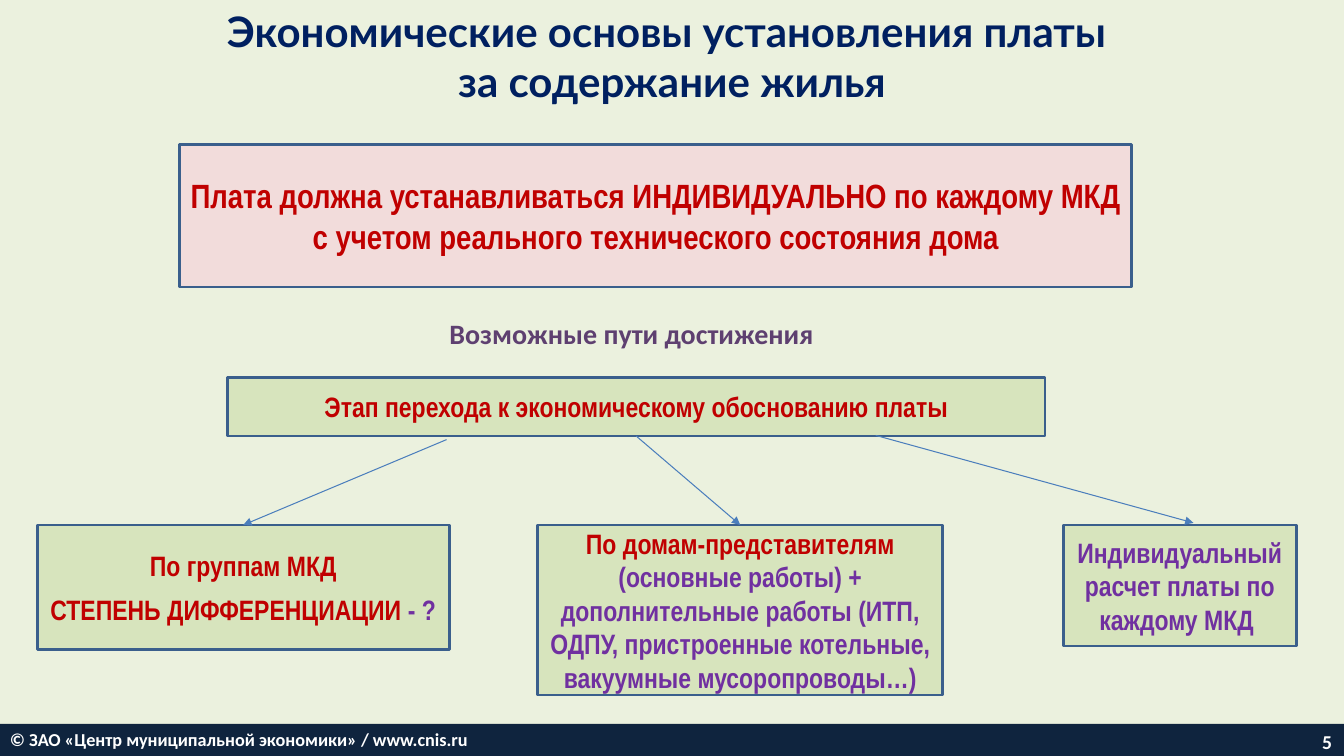
from copy import deepcopy
from dataclasses import dataclass

from pptx import Presentation
from pptx.dml.color import RGBColor
from pptx.enum.shapes import MSO_CONNECTOR, MSO_SHAPE
from pptx.enum.text import MSO_ANCHOR, MSO_AUTO_SIZE, PP_ALIGN
from pptx.oxml.ns import qn
from pptx.util import Pt
from lxml.etree import SubElement


@dataclass(frozen=True)
class Theme:
    background: str = "EBF1DE"
    navy: str = "002060"
    red: str = "C00000"
    purple: str = "7030A0"
    plum: str = "5E4070"
    white: str = "FFFFFF"
    pink: str = "F2DCDB"
    green: str = "D7E4BD"
    footer: str = "0F243E"
    border: str = "3A5F8C"
    arrow: str = "4B7EBC"
    title_font: str = "Lato"
    box_font: str = "Arial Narrow"
    plain_font: str = "Calibri"
    title_size: int = 30
    thesis_size: int = 24
    body_size: int = 20
    number_size: int = 14
    footer_size: int = 13


def color(value):
    return RGBColor.from_string(value)


def write(frame, paragraphs, font, size, align=PP_ALIGN.LEFT,
          anchor=MSO_ANCHOR.TOP, after=0):
    frame.word_wrap = True
    frame.auto_size = MSO_AUTO_SIZE.NONE
    frame.vertical_anchor = anchor
    for index, spans in enumerate(paragraphs):
        para = frame.add_paragraph() if index else frame.paragraphs[0]
        para.alignment = align
        para.space_after = Pt(after)
        for text, ink in spans:
            for line, words in enumerate(text.split("\n")):
                if line:
                    para.add_line_break()
                    para._p[-1].append(deepcopy(span._r.rPr))
                span = para.add_run()
                span.text = words
                span.font.name = font
                span.font.size = Pt(size)
                span.font.bold = True
                span.font.color.rgb = color(ink)


class SlideBuilder:
    def __init__(self, page, theme):
        self.page = page
        self.theme = theme
        page.background.fill.solid()
        page.background.fill.fore_color.rgb = color(theme.background)

    def title(self, text, left, top, width, height):
        box = self.page.shapes.title
        box.left, box.top, box.width, box.height = map(Pt, (left, top, width, height))
        write(box.text_frame, [[(text, self.theme.navy)]], self.theme.title_font,
              self.theme.title_size, align=PP_ALIGN.CENTER)

    def label(self, text, ink, size, place, **layout):
        box = self.page.shapes.add_textbox(*map(Pt, place))
        write(box.text_frame, [[(text, ink)]], self.theme.plain_font, size, **layout)

    def rectangle(self, place, fill):
        box = self.page.shapes.add_shape(MSO_SHAPE.RECTANGLE, *map(Pt, place))
        box.shadow.inherit = False
        box.fill.solid()
        box.fill.fore_color.rgb = color(fill)
        box.line.fill.background()
        return box

    def card(self, paragraphs, place, fill=None, size=None):
        box = self.rectangle(place, fill or self.theme.green)
        box.line.color.rgb = color(self.theme.border)
        box.line.width = Pt(2)
        write(box.text_frame, paragraphs, self.theme.box_font,
              size or self.theme.body_size, align=PP_ALIGN.CENTER,
              anchor=MSO_ANCHOR.MIDDLE, after=7)
        return box

    def footer(self, text, place):
        box = self.rectangle(place, self.theme.footer)
        write(box.text_frame, [[(text, self.theme.white)]], self.theme.plain_font,
              self.theme.footer_size)

    def arrow(self, start, end, source=None, target=None):
        link = self.page.shapes.add_connector(
            MSO_CONNECTOR.STRAIGHT, *map(Pt, (*start, *end)))
        if source:
            link.begin_connect(source, 2)
        if target:
            link.end_connect(target, 0)
        link.line.color.rgb = color(self.theme.arrow)
        link.line.width = Pt(0.75)
        SubElement(link.line._get_or_add_ln(), qn("a:tailEnd"), type="triangle")
        SubElement(link._element.spPr, qn("a:effectLst"))


def main():
    deck = Presentation()
    deck.slide_width, deck.slide_height = Pt(960), Pt(540)
    theme = Theme()
    slide = SlideBuilder(deck.slides.add_slide(deck.slide_layouts[5]), theme)
    row_top = 375

    slide.title("Экономические основы установления платы \nза содержание жилья",
                120, 0, 720, 80)
    slide.card([[("Плата должна устанавливаться ИНДИВИДУАЛЬНО по каждому МКД "
                  "с учетом реального технического состояния дома", theme.red)]],
               (128, 103, 680.5, 102), theme.pink, theme.thesis_size)
    slide.label("Возможные пути достижения", theme.plum, theme.body_size,
                (314, 222.5, 357, 32))
    stage = slide.card([[("Этап перехода к экономическому обоснованию платы", theme.red)]],
                       (162.5, 269.5, 584, 42))

    groups = slide.card([[("По группам МКД", theme.red)],
                         [("СТЕПЕНЬ ДИФФЕРЕНЦИАЦИИ ", theme.red), ("- ?", theme.purple)]],
                        (26.5, row_top, 294.5, 89))
    samples = slide.card([[("По домам-представителям ", theme.red),
                           ("(основные работы) + дополнительные работы (ИТП, ОДПУ, "
                            "пристроенные котельные, вакуумные мусоропроводы…)",
                            theme.purple)]],
                         (384, row_top, 289.5, 121.5))
    slide.card([[("Индивидуальный расчет платы по каждому МКД ", theme.purple)]],
               (759.5, row_top, 166.5, 86.5))

    slide.arrow((319, 314), (173.5, row_top), target=groups)
    slide.arrow((454.5, 311.5), (528.5, row_top), source=stage, target=samples)
    slide.arrow((625.5, 311), (852.5, 373.5))

    slide.footer("© ЗАО «Центр муниципальной экономики» / www.cnis.ru",
                 (0, 517, 960, 23))
    slide.label("5", theme.white, theme.number_size, (790.5, 519, 168, 21.5),
                align=PP_ALIGN.RIGHT, anchor=MSO_ANCHOR.MIDDLE)
    deck.save("out.pptx")


if __name__ == "__main__":
    main()
